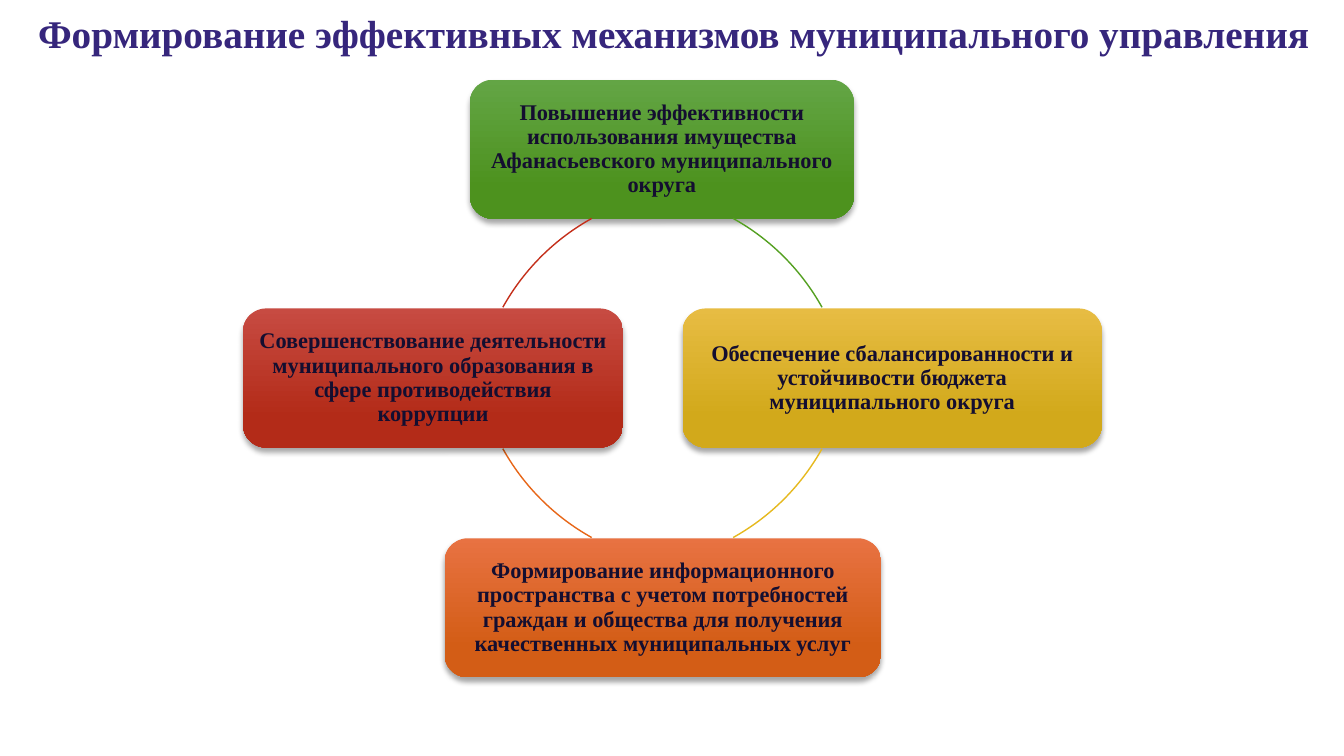
from lxml import etree
from pptx import Presentation
from pptx.dml.color import RGBColor
from pptx.enum.shapes import MSO_SHAPE
from pptx.enum.text import MSO_ANCHOR, PP_ALIGN
from pptx.oxml.ns import qn
from pptx.util import Inches, Pt

FONT = "Times New Roman"
TITLE = "Формирование эффективных механизмов муниципального управления"
BOX_HEIGHT = 1.38
ARC_SIZE = 4.55
ARC_MARGIN = 29.1  # degrees between an arc's end and the nearest axis

# text, left, top, width, gradient top colour, gradient bottom colour
GOALS = [
    ("Повышение эффективности использования имущества Афанасьевского муниципального округа",
     4.66, 0.79, 3.81, "63A545", "4D921E"),
    ("Обеспечение сбалансированности и устойчивости бюджета муниципального округа",
     6.77, 3.06, 4.16, "E7BC43", "D2A91B"),
    ("Формирование информационного пространства с учетом потребностей граждан "
     "и общества для получения качественных муниципальных услуг",
     4.41, 5.34, 4.33, "E87242", "D35D16"),
    ("Совершенствование деятельности муниципального образования в сфере противодействия коррупции",
     2.41, 3.06, 3.77, "C74B42", "B32B18"),
]

# left, top, quadrant start angle, colour
ARCS = [
    (3.89, 1.88, 270, "54A021"),
    (3.89, 1.07, 0, "E6B91E"),
    (4.7, 1.07, 90, "E76618"),
    (4.7, 1.88, 180, "C42F1A"),
]


def color(value):
    return RGBColor.from_string(value)


def write_text(shape, text, size, text_color, anchor, inset, line_spacing):
    frame = shape.text_frame
    frame.word_wrap = True
    frame.vertical_anchor = anchor
    for side in ("left", "top", "right", "bottom"):
        setattr(frame, f"margin_{side}", Inches(inset))
    paragraph = frame.paragraphs[0]
    paragraph.text = text
    paragraph.alignment = PP_ALIGN.CENTER
    paragraph.line_spacing = line_spacing
    font = paragraph.runs[0].font
    for name, value in {"name": FONT, "size": Pt(size), "bold": True}.items():
        setattr(font, name, value)
    font.color.rgb = color(text_color)


def add_title(slide):
    box = slide.shapes.add_textbox(Inches(0.02), Inches(0.03), Inches(13.32), Inches(0.53))
    write_text(box, TITLE, 28, "36267C", MSO_ANCHOR.BOTTOM, 0, 1.0)


def add_soft_shadow(shape):
    shape.shadow.inherit = False
    effects = shape._element.spPr.find(qn("a:effectLst"))
    shadow = etree.SubElement(effects, qn("a:outerShdw"), blurRad=str(Pt(4)),
                              dist=str(Pt(3)), dir="5400000", rotWithShape="0")
    shade = etree.SubElement(shadow, qn("a:srgbClr"), val="000000")
    etree.SubElement(shade, qn("a:alpha"), val="35000")


def add_goal(slide, text, left, top, width, top_color, bottom_color):
    box = slide.shapes.add_shape(MSO_SHAPE.ROUNDED_RECTANGLE, Inches(left), Inches(top),
                                 Inches(width), Inches(BOX_HEIGHT))
    box.fill.gradient()
    box.fill.gradient_angle = 270
    stops = zip(box.fill.gradient_stops, (0, 0.78), (top_color, bottom_color))
    for stop, position, stop_color in stops:
        stop.position = position
        stop.color.rgb = color(stop_color)
    box.line.fill.background()
    add_soft_shadow(box)
    write_text(box, text, 16, "140E30", MSO_ANCHOR.MIDDLE, 0.07, 0.9)


def add_arc(slide, left, top, quadrant, line_color):
    arc = slide.shapes.add_shape(MSO_SHAPE.ARC, Inches(left), Inches(top),
                                 Inches(ARC_SIZE), Inches(ARC_SIZE))
    # Angles are stored in 1/60000 degree, adjustments in 1/100000
    arc.adjustments[0] = (quadrant + ARC_MARGIN) * 0.6
    arc.adjustments[1] = (quadrant + 90 - ARC_MARGIN) * 0.6
    arc.fill.background()
    arc.line.color.rgb = color(line_color)
    arc.line.width = Pt(1)
    arc.shadow.inherit = False


def main():
    presentation = Presentation()
    presentation.slide_width = Inches(13.33)
    presentation.slide_height = Inches(7.5)
    slide = presentation.slides.add_slide(presentation.slide_layouts[6])
    add_title(slide)
    for goal, arc in zip(GOALS, ARCS):
        add_goal(slide, *goal)
        add_arc(slide, *arc)
    presentation.save("out.pptx")


if __name__ == "__main__":
    main()
